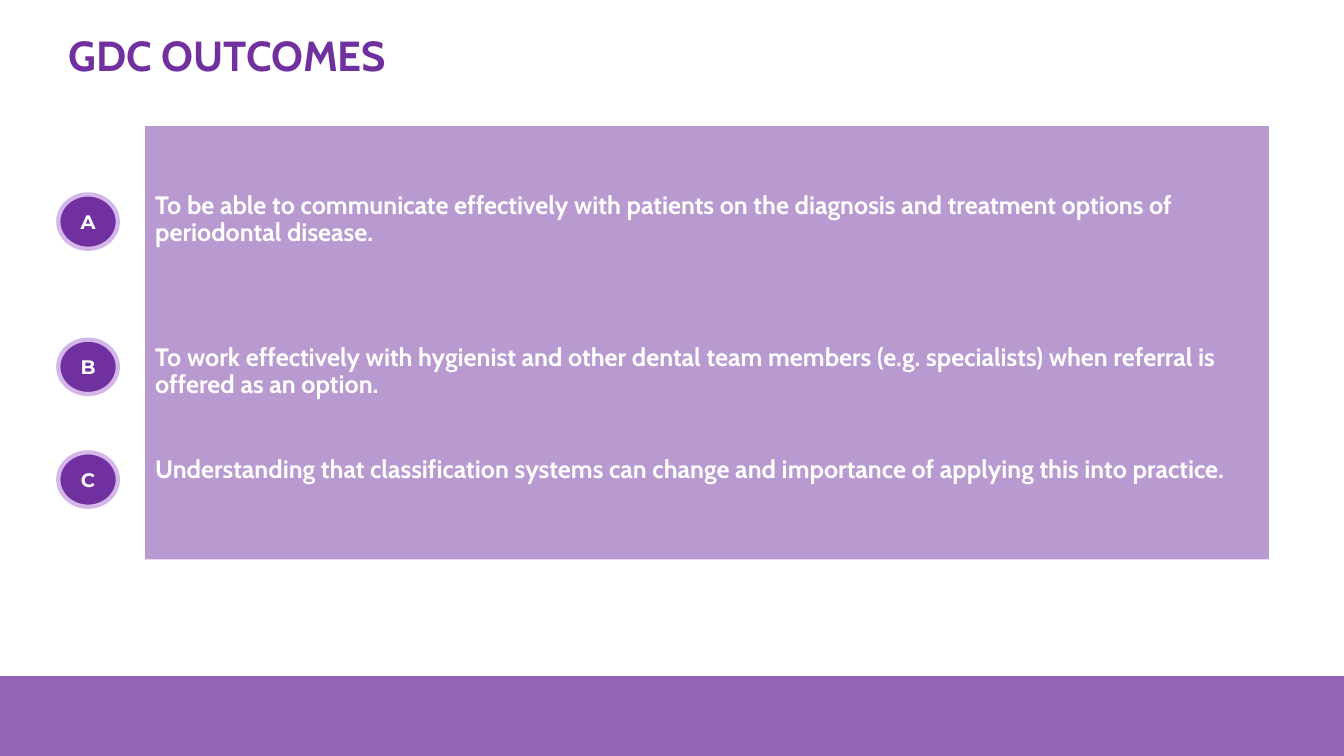
from lxml import etree
from pptx import Presentation
from pptx.dml.color import RGBColor
from pptx.enum.shapes import MSO_SHAPE
from pptx.enum.text import MSO_ANCHOR, PP_ALIGN
from pptx.oxml.ns import qn
from pptx.util import Cm, Pt

RECT, OVAL = MSO_SHAPE.RECTANGLE, MSO_SHAPE.OVAL
TOP, MIDDLE = MSO_ANCHOR.TOP, MSO_ANCHOR.MIDDLE
LEFT, CENTER = PP_ALIGN.LEFT, PP_ALIGN.CENTER
PURPLE, LILAC, WHITE = "7030A0", "D3B6EA", "FFFFFF"


def add_block(kind, left, top, width, height, alpha=100):
    block = slide.shapes.add_shape(kind, Cm(left), Cm(top), Cm(width), Cm(height))
    block.shadow.inherit = False
    block.line.fill.background()
    block.fill.solid()
    block.fill.fore_color.rgb = RGBColor.from_string(PURPLE)
    if alpha < 100:
        tint = block.fill._xPr.find(".//" + qn("a:srgbClr"))
        etree.SubElement(tint, qn("a:alpha"), val=str(alpha * 1000))
    return block


def style(para, font, size, color, align):
    para.alignment = align
    para.font.name = font
    para.font.size = Pt(size)
    para.font.bold = True
    para.font.color.rgb = RGBColor.from_string(color)


deck = Presentation()
deck.slide_width, deck.slide_height = Cm(33.87), Cm(19.05)
slide = deck.slides.add_slide(deck.slide_layouts[5])

add_block(RECT, 0, 17.04, 33.87, 2.01, 75)

title = slide.shapes.title
title.left, title.top, title.width, title.height = Cm(1.47), Cm(0.43), Cm(23.52), Cm(2.08)
title.text_frame.text = "GDC OUTCOMES"
title.text_frame.vertical_anchor = MIDDLE
head = title.text_frame.paragraphs[0]
style(head, "Cabin", 30, PURPLE, LEFT)
head.line_spacing = 0.9

panel = add_block(RECT, 3.66, 3.18, 28.32, 10.92, 49)
frame = panel.text_frame
frame.word_wrap = True
frame.vertical_anchor = TOP
frame.margin_top = Cm(1.68)

outcomes = [
    ("A", 4.9, 0, "To be able to communicate effectively with patients on the diagnosis and treatment options of periodontal disease."),
    ("B", 8.56, 69.5, "To work effectively with hygienist and other dental team members (e.g. specialists) when referral is offered as an option."),
    ("C", 11.4, 41.5, "Understanding that classification systems can change and importance of applying this into practice."),
]
for row, (letter, top, gap, text) in enumerate(outcomes):
    para = frame.add_paragraph() if row else frame.paragraphs[0]
    para.text = text
    para.line_spacing = 0.9
    para.space_before = Pt(gap)
    style(para, "Cabin", 18, WHITE, LEFT)

    badge = add_block(OVAL, 1.47, top, 1.5, 1.37)
    badge.line.color.rgb = RGBColor.from_string(LILAC)
    badge.line.width = Pt(3)
    badge.text_frame.text = letter
    badge.text_frame.vertical_anchor = MIDDLE
    style(badge.text_frame.paragraphs[0], "Montserrat", 14, WHITE, CENTER)

deck.save("out.pptx")
